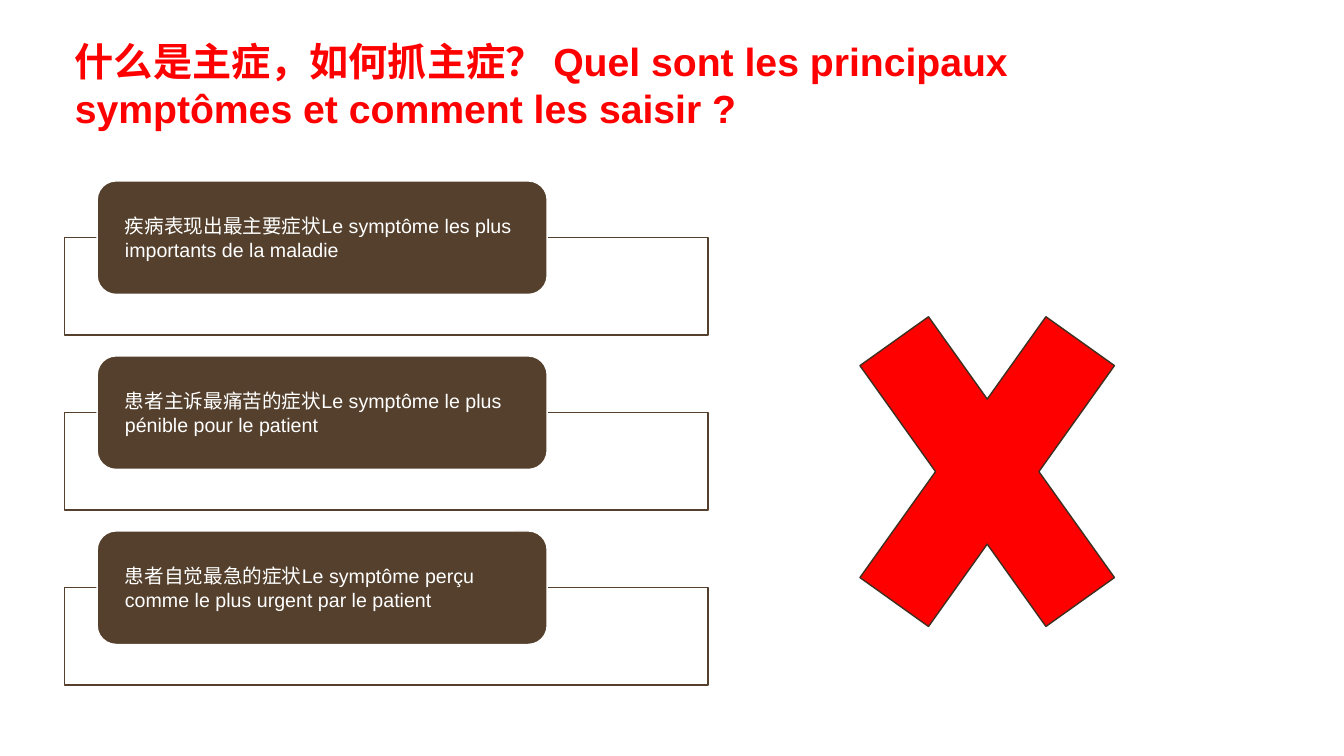
from dataclasses import dataclass

from lxml.etree import SubElement
from pptx import Presentation
from pptx.dml.color import RGBColor
from pptx.enum.shapes import MSO_SHAPE
from pptx.enum.text import MSO_ANCHOR, MSO_AUTO_SIZE, PP_ALIGN
from pptx.oxml.ns import qn
from pptx.util import Cm, Pt


@dataclass(frozen=True)
class Theme:
    font: str = "Arial"
    red: RGBColor = RGBColor(0xFF, 0x00, 0x00)
    brown: RGBColor = RGBColor(0x54, 0x40, 0x2C)
    dark_brown: RGBColor = RGBColor(0x3E, 0x2F, 0x21)
    white: RGBColor = RGBColor(0xFF, 0xFF, 0xFF)
    title_size: Pt = Pt(28)
    label_size: Pt = Pt(14)


theme = Theme()


def add_filled_shape(kind, left, top, width, height, fill, line):
    shape = slide.shapes.add_shape(kind, Cm(left), Cm(top), Cm(width), Cm(height))
    shape.shadow.inherit = False
    shape.fill.solid()
    shape.fill.fore_color.rgb = fill
    shape.line.color.rgb = line
    shape.line.width = Pt(1)
    return shape


def write_text(shape, text, size, color, bold, anchor):
    frame = shape.text_frame
    frame.word_wrap = True
    frame.auto_size = MSO_AUTO_SIZE.NONE
    frame.vertical_anchor = anchor
    paragraph = frame.paragraphs[0]
    paragraph.text = text
    paragraph.alignment = PP_ALIGN.LEFT
    paragraph.font.name = theme.font
    paragraph.font.size = size
    paragraph.font.bold = bold
    paragraph.font.color.rgb = color


presentation = Presentation()
presentation.slide_width = Cm(33.87)
presentation.slide_height = Cm(19.05)
slide = presentation.slides.add_slide(presentation.slide_layouts.get_by_name("Title Only"))

# Title
title = slide.shapes.title
title.left, title.top, title.width, title.height = Cm(1.63), Cm(0.81), Cm(25.68), Cm(2.64)
write_text(
    title,
    "什么是主症，如何抓主症？ Quel sont les principaux symptômes et comment les saisir ?",
    theme.title_size, theme.red, True, MSO_ANCHOR.TOP,
)

# Symptom list: an outlined frame with a rounded label over its top edge
symptoms = [
    "疾病表现出最主要症状Le symptôme les plus importants de la maladie",
    "患者主诉最痛苦的症状Le symptôme le plus pénible pour le patient",
    "患者自觉最急的症状Le symptôme perçu comme le plus urgent par le patient",
]
first_top, row_pitch = 4.56, 4.41
for row, symptom in enumerate(symptoms):
    top = first_top + row * row_pitch
    frame_box = add_filled_shape(
        MSO_SHAPE.RECTANGLE, 1.63, top + 1.43, 16.21, 2.45, theme.white, theme.brown)
    frame_color = frame_box.fill._xPr.find(qn("a:solidFill"))[0]
    SubElement(frame_color, qn("a:alpha"), val="90000")

    label = add_filled_shape(
        MSO_SHAPE.ROUNDED_RECTANGLE, 2.45, top, 11.34, 2.86, theme.brown, theme.white)
    label.text_frame.margin_left = label.text_frame.margin_right = Cm(0.56)
    label.text_frame.margin_top = label.text_frame.margin_bottom = Cm(0.15)
    write_text(label, symptom, theme.label_size, theme.white, False, MSO_ANCHOR.MIDDLE)

# Red cross
add_filled_shape(
    MSO_SHAPE.MATH_MULTIPLY, 20.37, 5.56, 9.02, 12.65, theme.red, theme.dark_brown)

presentation.save("out.pptx")
